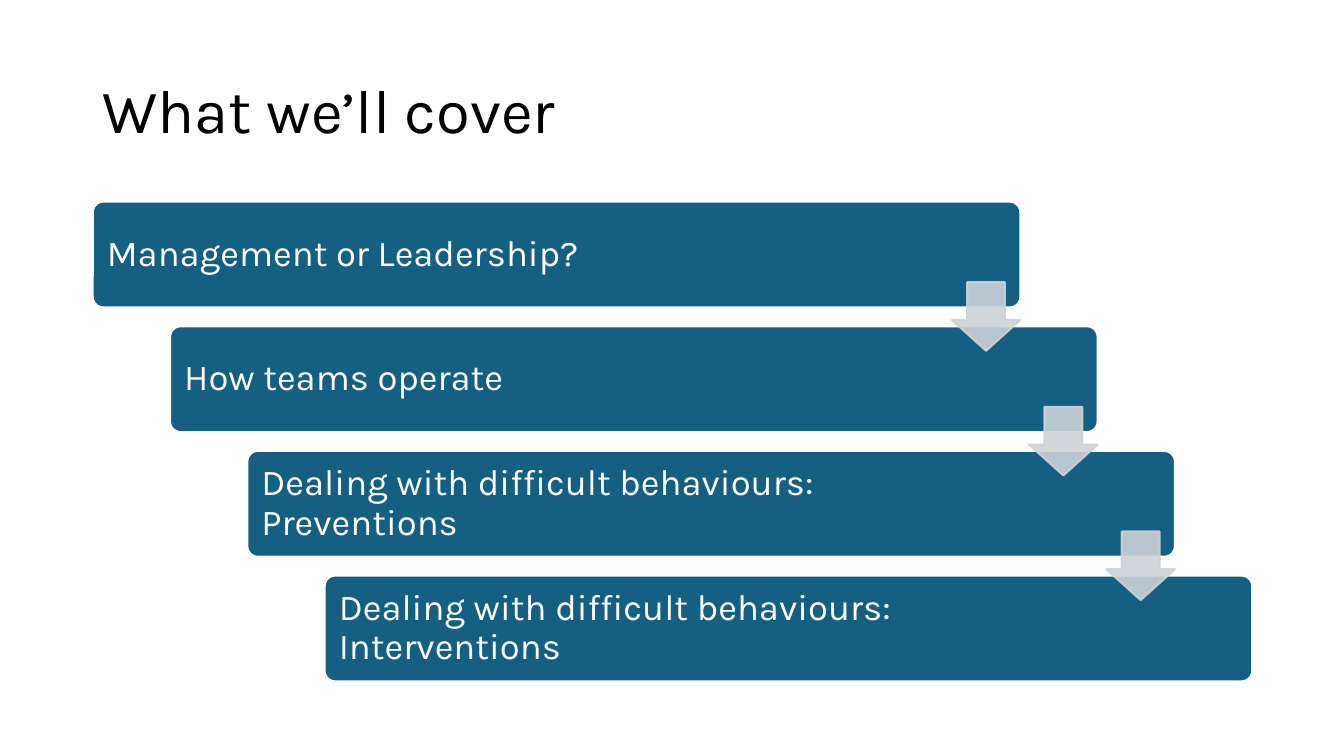
from dataclasses import dataclass

from lxml.etree import SubElement
from pptx import Presentation
from pptx.dml.color import RGBColor
from pptx.dml.fill import FillFormat
from pptx.enum.shapes import MSO_SHAPE
from pptx.enum.text import MSO_ANCHOR, PP_ALIGN
from pptx.oxml.ns import qn
from pptx.shapes.autoshape import Shape
from pptx.slide import Slide
from pptx.util import Inches, Pt

FONT = "Karla"
BLACK, WHITE, TEAL, GREY = "000000", "FFFFFF", "156082", "CCD2D8"

# Staircase of topic bars: first and last positions fix the equal steps
BAR_WIDTH, BAR_HEIGHT = 9.2, 1.05
FIRST_LEFT, LAST_LEFT = 0.92, 3.22
FIRST_TOP, LAST_TOP = 2.0, 5.71
ARROW_SIZE, ARROW_DROP = 0.68, 0.8
TOPICS = [
    "Management or Leadership?",
    "How teams operate",
    "Dealing with difficult behaviours: Preventions",
    "Dealing with difficult behaviours: Interventions",
]


@dataclass
class Step:
    text: str
    left: float
    top: float


def color(hex_code: str) -> RGBColor:
    return RGBColor.from_string(hex_code)


def paint(fill: FillFormat, hex_code: str, opacity: int) -> None:
    fill.solid()
    fill.fore_color.rgb = color(hex_code)
    if opacity < 100:
        for rgb in fill._xPr.iter(qn("a:srgbClr")):
            if rgb.find(qn("a:alpha")) is None:
                SubElement(rgb, qn("a:alpha"), val=str(opacity * 1000))


def write(box: Shape, text: str, *, size: float, hex_code: str,
          insets: tuple[float, float, float, float]) -> None:
    frame = box.text_frame
    frame.word_wrap = True
    frame.vertical_anchor = MSO_ANCHOR.MIDDLE
    frame.margin_left, frame.margin_top, frame.margin_right, frame.margin_bottom = map(Inches, insets)
    para = frame.paragraphs[0]
    para.alignment = PP_ALIGN.LEFT
    para.line_spacing = 0.9
    span = para.add_run()
    span.text = text
    span.font.name = FONT
    span.font.size = Pt(size)
    span.font.color.rgb = color(hex_code)


def add_block(page: Slide, kind: MSO_SHAPE, left: float, top: float, width: float, height: float,
              *, adjustments: tuple[float, ...], fill: str, line: str, opacity: int = 100) -> Shape:
    block = page.shapes.add_shape(kind, Inches(left), Inches(top), Inches(width), Inches(height))
    block.shadow.inherit = False
    for index, value in enumerate(adjustments):
        block.adjustments[index] = value
    paint(block.fill, fill, opacity)
    block.line.width = Pt(1.5)
    paint(block.line.fill, line, opacity)
    return block


def add_bar(page: Slide, step: Step) -> None:
    bar = add_block(page, MSO_SHAPE.ROUNDED_RECTANGLE, step.left, step.top, BAR_WIDTH, BAR_HEIGHT,
                    adjustments=(0.1,), fill=TEAL, line=WHITE)
    # The wide right inset keeps the text clear of the arrows
    write(bar, step.text, size=26, hex_code=WHITE, insets=(0.11, 0.11, 1.55, 0.11))


def add_arrow(page: Slide, step: Step) -> None:
    add_block(page, MSO_SHAPE.DOWN_ARROW, step.left + BAR_WIDTH - ARROW_SIZE, step.top + ARROW_DROP,
              ARROW_SIZE, ARROW_SIZE, adjustments=(0.55, 0.45), fill=GREY, line=GREY, opacity=90)


def main() -> None:
    deck = Presentation()
    deck.slide_width, deck.slide_height = Inches(13.33), Inches(7.5)
    page = deck.slides.add_slide(deck.slide_layouts[6])

    # Title
    title = page.shapes.add_textbox(Inches(0.92), Inches(0.4), Inches(11.5), Inches(1.45))
    write(title, "What we’ll cover", size=44, hex_code=BLACK, insets=(0.1, 0.05, 0.1, 0.05))

    # Topic bars, then the arrows that lead from each to the next
    gaps = len(TOPICS) - 1
    steps = [
        Step(text, FIRST_LEFT + index * (LAST_LEFT - FIRST_LEFT) / gaps,
             FIRST_TOP + index * (LAST_TOP - FIRST_TOP) / gaps)
        for index, text in enumerate(TOPICS)
    ]
    for step in steps:
        add_bar(page, step)
    for step in steps[:-1]:
        add_arrow(page, step)

    deck.save("out.pptx")


if __name__ == "__main__":
    main()
